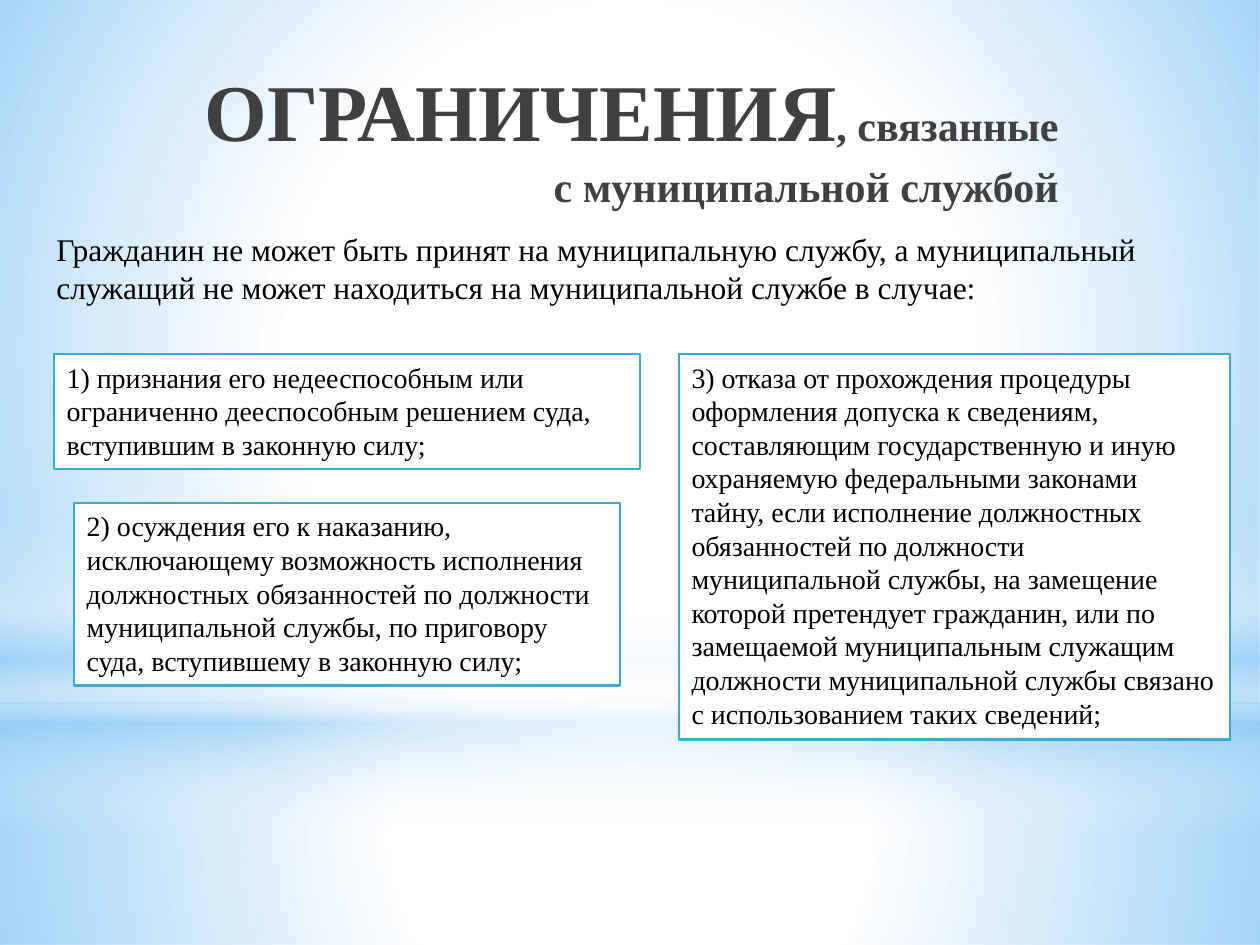
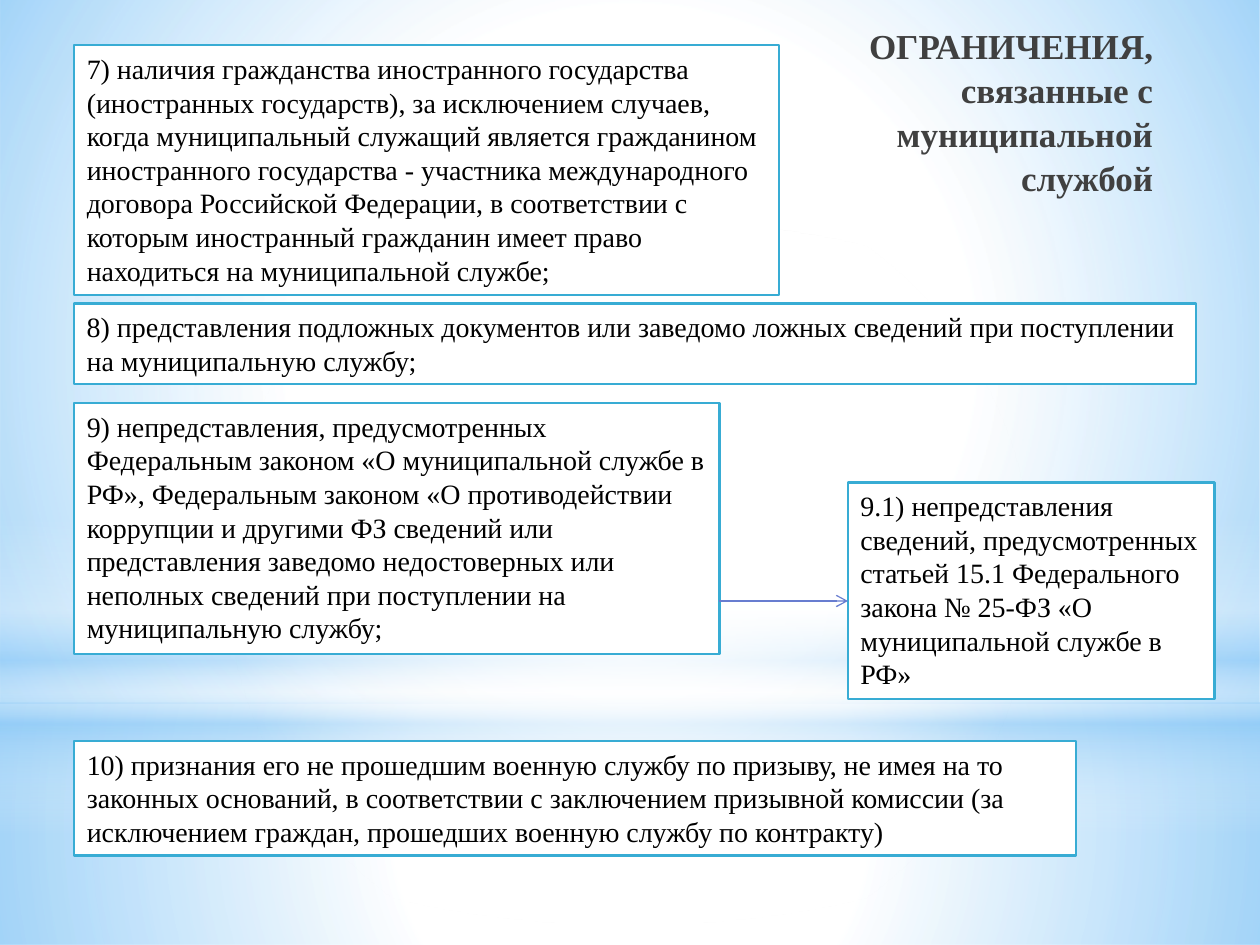
"""Builds two slides on the restrictions of municipal service."""
from dataclasses import dataclass

from pptx import Presentation
from pptx.dml.color import RGBColor
from pptx.enum.shapes import MSO_CONNECTOR, MSO_SHAPE
from pptx.enum.text import MSO_ANCHOR, MSO_AUTO_SIZE, PP_ALIGN
from pptx.oxml import parse_xml
from pptx.oxml.ns import nsdecls, qn
from pptx.oxml.xmlchemy import OxmlElement
from pptx.util import Pt

PX = 9144


@dataclass(frozen=True)
class Theme:
    """Colours, font and type sizes of the deck."""
    font: str = "Times New Roman"
    white: str = "FFFFFF"
    sky: str = "8BC9F7"
    border: str = "38ACD4"
    arrow: str = "687DD0"
    title: str = "404040"
    text: str = "000000"
    keyword_size: int = 46
    title_size: int = 24
    side_title_size: int = 20
    intro_size: int = 18
    clause_size: int = 16


THEME = Theme()
RADIAL = ('<a:path path="circle"><a:fillToRect l="50000" t="50000" '
          'r="50000" b="50000"/></a:path>')
DOWNWARD = '<a:lin ang="5400000" scaled="0"/>'
W, S = THEME.white, THEME.sky
BACKDROP = (
    (MSO_SHAPE.RECTANGLE, (0, 558, 1000, 192), RADIAL,
     ((0, W, 91), (37, W, 76), (100, S, 79))),
    (MSO_SHAPE.RECTANGLE, (0, 0, 1000, 558), RADIAL,
     ((0, W, 89), (48, W, 62), (100, S, 79))),
    (MSO_SHAPE.RECTANGLE, (0, 412, 1000, 250), DOWNWARD,
     ((0, W, 0), (29, W, 30), (45, S, 40), (55, W, 26), (65, S, 60), (100, W, 0))),
    (MSO_SHAPE.OVAL, (0, 175, 1000, 558), RADIAL,
     ((0, W, 100), (56, W, 0))),
)

INTRO = ("Гражданин не может быть принят на муниципальную службу, а муниципальный "
         "служащий не может находиться на муниципальной службе в случае:")
FIRST_CLAUSES = (
    ((43, 281, 465, 91),
     "1) признания его недееспособным или ограниченно дееспособным решением суда, "
     "вступившим в законную силу;"),
    ((59, 399, 433, 145),
     "2) осуждения его к наказанию, исключающему возможность исполнения должностных "
     "обязанностей по должности муниципальной службы, по приговору суда, "
     "вступившему в законную силу;"),
    ((539, 281, 437, 306),
     "3) отказа от прохождения процедуры оформления допуска к сведениям, "
     "составляющим государственную и иную охраняемую федеральными законами тайну, "
     "если исполнение должностных обязанностей по должности муниципальной службы, "
     "на замещение которой претендует гражданин, или по замещаемой муниципальным "
     "служащим должности муниципальной службы связано с использованием таких "
     "сведений;"),
)
LAST_CLAUSES = (
    ((59, 36, 559, 198),
     "7) наличия гражданства иностранного государства (иностранных государств), за "
     "исключением случаев, когда муниципальный служащий является гражданином "
     "иностранного государства - участника международного договора Российской "
     "Федерации, в соответствии с которым иностранный гражданин имеет право "
     "находиться на муниципальной службе;"),
    ((59, 241, 890, 64),
     "8) представления подложных документов или заведомо ложных сведений при "
     "поступлении на муниципальную службу;"),
    ((59, 320, 512, 199),
     "9) непредставления, предусмотренных Федеральным законом «О муниципальной "
     "службе в РФ», Федеральным законом «О противодействии коррупции и другими ФЗ "
     "сведений или представления заведомо недостоверных или неполных сведений при "
     "поступлении на муниципальную службу;"),
    ((673, 383, 291, 172),
     "9.1) непредставления сведений, предусмотренных статьей 15.1 Федерального "
     "закона № 25-ФЗ «О муниципальной службе в РФ»"),
    ((59, 588, 795, 91),
     "10) признания его не прошедшим военную службу по призыву, не имея на то "
     "законных оснований, в соответствии с заключением призывной комиссии (за "
     "исключением граждан, прошедших военную службу по контракту)"),
)


def emu(box):
    """Turn px lengths into EMU."""
    return [length * PX for length in box]


def style_run(run, size, color, bold=False):
    """Give a run the deck's font with a size and colour."""
    run.font.name = THEME.font
    run.font.size = Pt(size)
    run.font.bold = bold
    run.font.color.rgb = RGBColor.from_string(color)


def add_backdrop(slide):
    """Lay the translucent sky gradients over the slide."""
    for outline, box, direction, stops in BACKDROP:
        glow = slide.shapes.add_shape(outline, *emu(box))
        glow.shadow.inherit = False
        glow.line.fill.background()
        glow.fill.solid()
        stop_list = "".join(
            f'<a:gs pos="{position * 1000}"><a:srgbClr val="{color}">'
            f'<a:alpha val="{alpha * 1000}"/></a:srgbClr></a:gs>'
            for position, color, alpha in stops)
        gradient = parse_xml(f'<a:gradFill {nsdecls("a")} rotWithShape="1">'
                             f'<a:gsLst>{stop_list}</a:gsLst>{direction}</a:gradFill>')
        properties = glow._element.spPr
        properties.replace(properties.find(qn("a:solidFill")), gradient)


def add_title(slide, box, parts):
    """Set a bold right-aligned title from (text, size) parts."""
    frame = slide.shapes.add_textbox(*emu(box)).text_frame
    frame.word_wrap = True
    frame.vertical_anchor = MSO_ANCHOR.TOP
    heading = frame.paragraphs[0]
    heading.alignment = PP_ALIGN.RIGHT
    heading.line_spacing = 1.05
    indents = heading._p.get_or_add_pPr()
    indents.set("marL", str(35 * PX))
    indents.set("indent", str(-35 * PX))
    for text, size in parts:
        run = heading.add_run()
        run.text = text
        style_run(run, size, THEME.title, bold=True)


def fill_text(holder, text, size):
    """Write one left-aligned paragraph into a shape that fits its text."""
    frame = holder.text_frame
    frame.word_wrap = True
    frame.auto_size = MSO_AUTO_SIZE.SHAPE_TO_FIT_TEXT
    frame.vertical_anchor = MSO_ANCHOR.TOP
    frame.text = text
    frame.paragraphs[0].alignment = PP_ALIGN.LEFT
    style_run(frame.paragraphs[0].runs[0], size, THEME.text)


def add_clause(slide, box, text):
    """Draw a bordered white box with one clause."""
    clause = slide.shapes.add_shape(MSO_SHAPE.RECTANGLE, *emu(box))
    clause.shadow.inherit = False
    clause.fill.solid()
    clause.fill.fore_color.rgb = RGBColor.from_string(THEME.white)
    clause.line.color.rgb = RGBColor.from_string(THEME.border)
    clause.line.width = Pt(1.25)
    fill_text(clause, text, THEME.clause_size)


def add_arrow(slide, source_box, target_box, y):
    """Join the right side of one box to the left side of another."""
    start = source_box[0] + source_box[2]
    arrow = slide.shapes.add_connector(
        MSO_CONNECTOR.STRAIGHT, *emu((start, y, target_box[0], y)))
    arrow.line.color.rgb = RGBColor.from_string(THEME.arrow)
    arrow.line.width = Pt(0.75)
    tail = OxmlElement("a:tailEnd")
    tail.set("type", "arrow")
    arrow.line._get_or_add_ln().append(tail)
    arrow._element.spPr.append(OxmlElement("a:effectLst"))


def start_slide(deck):
    """Add a blank slide with the shared backdrop."""
    slide = deck.slides.add_slide(deck.slide_layouts[6])
    add_backdrop(slide)
    return slide


def build_first_restrictions(deck):
    """Build the slide with the introduction and clauses 1 to 3."""
    slide = start_slide(deck)
    add_title(slide, (138, 40, 712, 126),
              (("ОГРАНИЧЕНИЯ", THEME.keyword_size),
               (", связанные с муниципальной службой", THEME.title_size)))
    intro = slide.shapes.add_textbox(*emu((35, 178, 913, 71)))
    fill_text(intro, INTRO, THEME.intro_size)
    for box, text in FIRST_CLAUSES:
        add_clause(slide, box, text)


def build_last_restrictions(deck):
    """Build the slide with clauses 7 to 10."""
    slide = start_slide(deck)
    for box, text in LAST_CLAUSES:
        add_clause(slide, box, text)
    add_arrow(slide, LAST_CLAUSES[2][0], LAST_CLAUSES[3][0], 477)
    add_title(slide, (634, 13, 291, 181),
              (("ОГРАНИЧЕНИЯ, связанные с муниципальной службой",
                THEME.side_title_size),))


def main():
    """Build and save the deck."""
    deck = Presentation()
    deck.slide_width, deck.slide_height = emu((1000, 750))
    build_first_restrictions(deck)
    build_last_restrictions(deck)
    deck.save("out.pptx")


if __name__ == "__main__":
    main()
